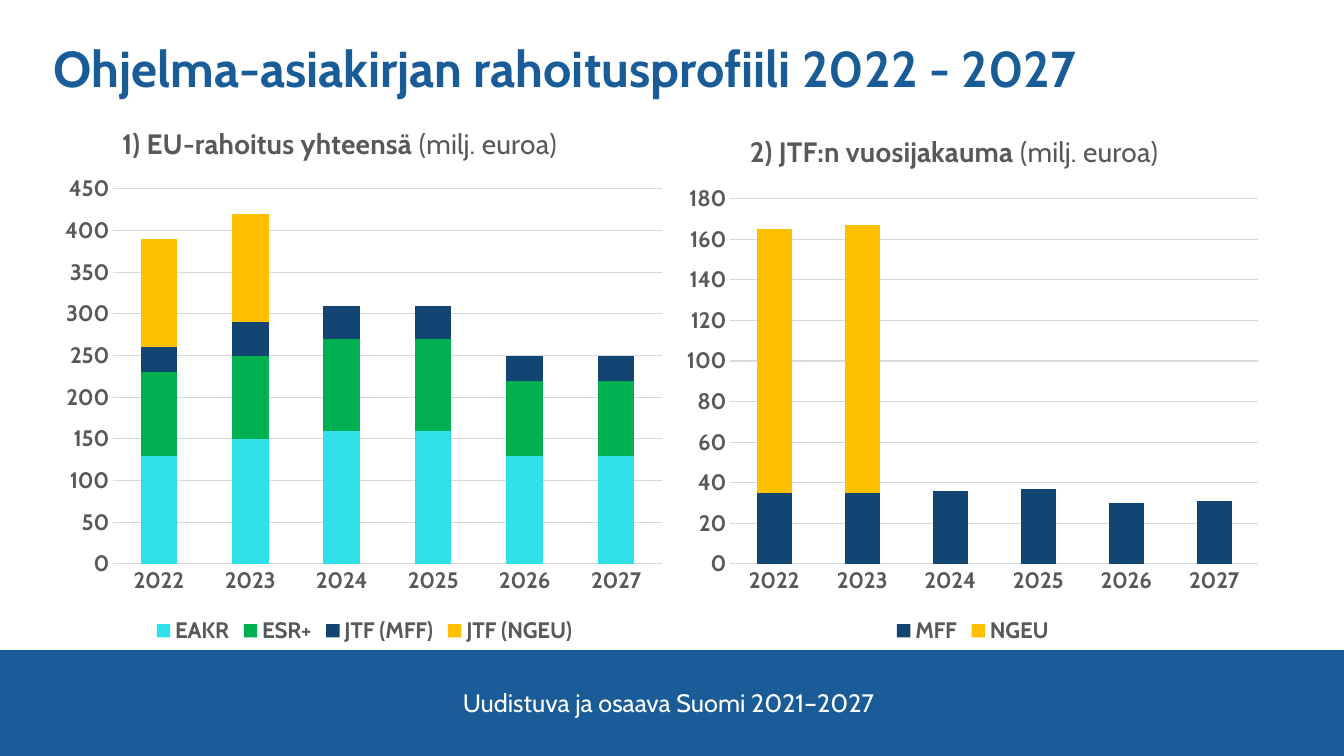
from pptx import Presentation
from pptx.chart.data import CategoryChartData
from pptx.dml.color import RGBColor
from pptx.enum.chart import XL_CHART_TYPE as ChartType, XL_LEGEND_POSITION as LegendPosition
from pptx.enum.chart import XL_TICK_MARK as TickMark
from pptx.enum.shapes import MSO_SHAPE as Shape
from pptx.enum.text import MSO_ANCHOR as Anchor, MSO_AUTO_SIZE as AutoSize, PP_ALIGN as Align
from pptx.oxml import parse_xml
from pptx.oxml.ns import nsdecls, qn
from pptx.util import Cm, Pt

# Content
FONT = "Cabin"
COLORS = {"blue": "195C98", "white": "FFFFFF", "text": "595959", "grid": "D9D9D9",
          "cyan": "31E1E9", "green": "00B050", "navy": "134572", "yellow": "FFC000"}
TITLE = "Ohjelma-asiakirjan rahoitusprofiili 2022 - 2027"
FOOTER = "Uudistuva ja osaava Suomi 2021–2027"
YEARS = [str(year) for year in range(2022, 2028)]
UNIT = " (milj. euroa)"

# Chart boxes are left, top, width, height in cm; heading is left, top
CHARTS = [
    {"heading": "1) EU-rahoitus yhteensä", "box": (1.35, 2.62, 15.67, 13.72),
     "heading_at": (3.0, 3.08), "plot": (2.85, 4.76, 13.83, 9.45),
     "maximum": 450, "step": 50,
     "series": [("EAKR", "cyan", (130, 150, 160, 160, 130, 130)),
                ("ESR+", "green", (100, 100, 110, 110, 90, 90)),
                ("JTF (MFF)", "navy", (30, 40, 40, 40, 30, 30)),
                ("JTF (NGEU)", "yellow", (130, 130, None, None, None, None))]},
    {"heading": "2) JTF:n vuosijakauma", "box": (17.02, 2.9, 14.99, 13.44),
     "heading_at": (18.82, 3.28), "plot": (18.4, 5.01, 13.31, 9.2),
     "maximum": 180, "step": 20,
     "series": [("MFF", "navy", (35, 35, 36, 37, 30, 31)),
                ("NGEU", "yellow", (130, 132, None, None, None, None))]},
]


def color(name):
    return RGBColor.from_string(COLORS[name])


def style_font(font, size, name, bold=False):
    font.name, font.size, font.bold = FONT, Pt(size), bold
    font.color.rgb = color(name)


def add_span(para, text, size, name, bold=False):
    span = para.add_run()
    span.text = text
    style_font(span.font, size, name, bold)


def manual_layout(box, area, target=None):
    """Express an area given in slide cm as fractions of the chart box."""
    left, top, width, height = box
    fractions = [(area[0] - left) / width, (area[1] - top) / height]
    fractions += [part / whole for part, whole in zip(area[2:], (width, height))]
    keys = ("x", "y", "w", "h")[:len(fractions)]
    inner = f'<c:layoutTarget val="{target}"/>' if target else ""
    inner += "".join(f'<c:{key}Mode val="edge"/>' for key in keys[:2])
    inner += "".join(f'<c:{key} val="{value:.4f}"/>' for key, value in zip(keys, fractions))
    return parse_xml(f'<c:layout {nsdecls("c")}><c:manualLayout>{inner}'
                     '</c:manualLayout></c:layout>')


def drop_layout(element):
    for layout in element.findall(qn("c:layout")):
        element.remove(layout)


def add_stacked_chart(page, item):
    data = CategoryChartData()
    data.categories = YEARS
    for name, _, values in item["series"]:
        data.add_series(name, values)
    box = item["box"]
    chart = page.shapes.add_chart(ChartType.COLUMN_STACKED, *map(Cm, box), data).chart
    style_font(chart.font, 16, "text", True)

    # Heading
    chart.has_title = True
    para = chart.chart_title.text_frame.paragraphs[0]
    add_span(para, item["heading"], 20, "text", True)
    add_span(para, UNIT, 20, "text")
    chart.chart_title.include_in_layout = False
    title = chart._chartSpace.find(".//" + qn("c:title"))
    drop_layout(title)
    title.find(qn("c:tx")).addnext(manual_layout(box, item["heading_at"]))

    # Axes and grid
    for axis in (chart.category_axis, chart.value_axis):
        axis.major_tick_mark = axis.minor_tick_mark = TickMark.NONE
        style_font(axis.tick_labels.font, 16, "text", True)
    values = chart.value_axis
    values.minimum_scale, values.maximum_scale = 0, item["maximum"]
    values.major_unit = item["step"]
    values.format.line.fill.background()
    for line in (chart.category_axis.format.line, values.major_gridlines.format.line):
        line.color.rgb = color("grid")
        line.width = Pt(0.75)

    # Columns
    plot = chart.plots[0]
    plot.gap_width, plot.overlap, plot.vary_by_categories = 150, 100, False
    for series, (_, name, _) in zip(plot.series, item["series"]):
        series.format.fill.solid()
        series.format.fill.fore_color.rgb = color(name)
    plot_area = chart._chartSpace.find(".//" + qn("c:plotArea"))
    drop_layout(plot_area)
    plot_area.insert(0, manual_layout(box, item["plot"], "inner"))

    # Legend
    chart.has_legend = True
    chart.legend.position = LegendPosition.BOTTOM
    chart.legend.include_in_layout = False
    style_font(chart.legend.font, 16, "text", True)


def main():
    deck = Presentation()
    deck.slide_width, deck.slide_height = Cm(33.87), Cm(19.05)
    page = deck.slides.add_slide(deck.slide_layouts[5])

    # Footer band
    band = page.shapes.add_shape(Shape.RECTANGLE, 0, Cm(16.38), deck.slide_width, Cm(2.67))
    band.shadow.inherit = False
    band.fill.solid()
    band.fill.fore_color.rgb = color("blue")
    band.line.fill.background()
    footer = page.shapes.add_textbox(Cm(7.65), Cm(17.2), Cm(18.4), Cm(1.02)).text_frame
    footer.word_wrap = True
    para = footer.paragraphs[0]
    para.alignment = Align.CENTER
    add_span(para, FOOTER, 18, "white")

    # Title
    title = page.shapes.title
    title.left, title.top, title.width, title.height = Cm(1.35), Cm(1.04), Cm(30.38), Cm(1.45)
    frame = title.text_frame
    frame.margin_left = frame.margin_right = frame.margin_top = frame.margin_bottom = 0
    frame.vertical_anchor = Anchor.BOTTOM
    frame.auto_size = AutoSize.NONE
    frame.word_wrap = True
    para = frame.paragraphs[0]
    para.alignment = Align.LEFT
    para.line_spacing = 0.9
    add_span(para, TITLE, 36, "blue", True)

    # Charts
    for item in CHARTS:
        add_stacked_chart(page, item)
    deck.save("out.pptx")


if __name__ == "__main__":
    main()
